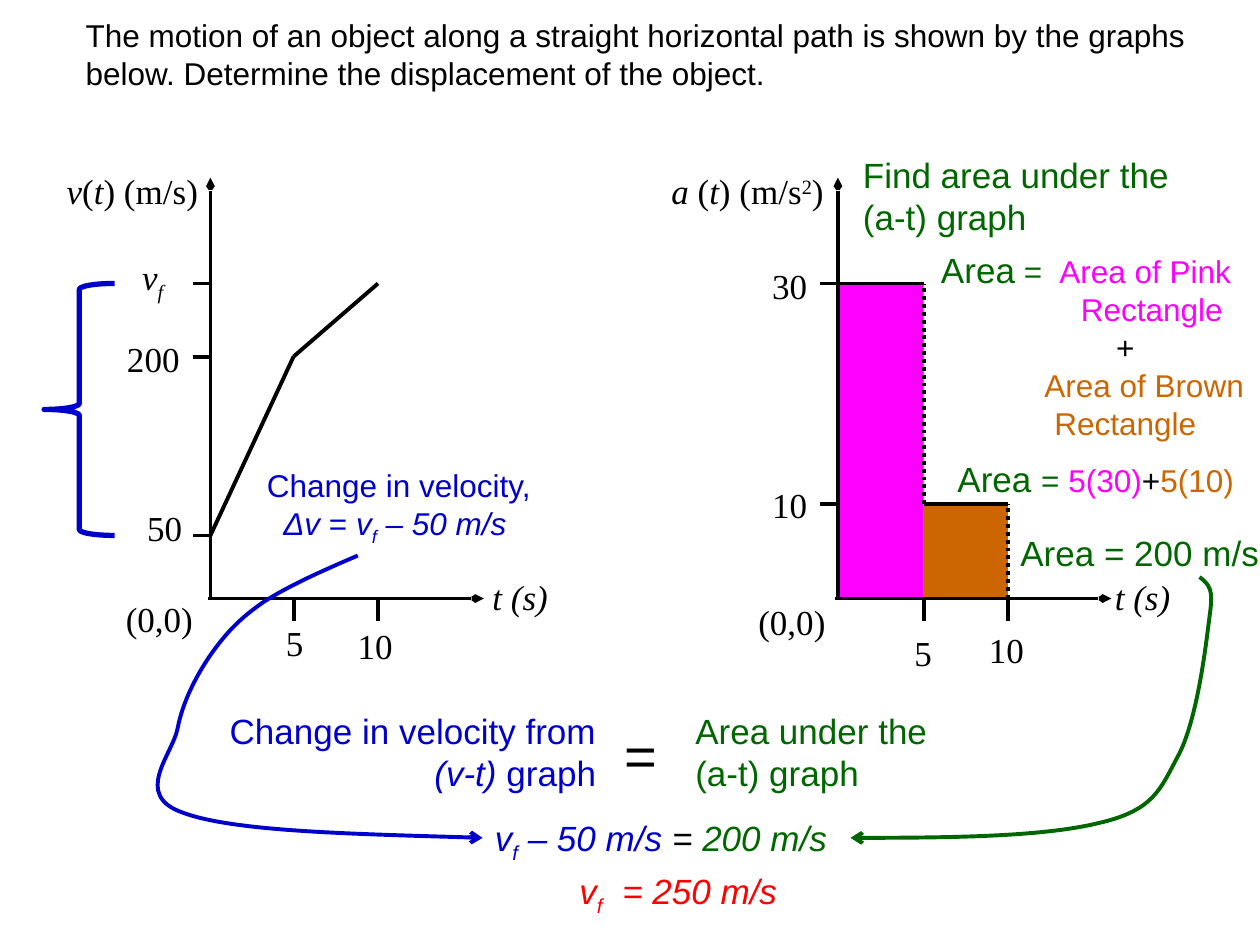
import pptx
import pptx.util
import pptx.dml.color
import pptx.enum.dml
import pptx.enum.shapes
import pptx.enum.text
import pptx.oxml.ns
import lxml.etree

Inches = pptx.util.Inches
RGBColor = pptx.dml.color.RGBColor
qn = pptx.oxml.ns.qn
ALIGN = pptx.enum.text.PP_ALIGN

BLACK = RGBColor(0, 0, 0)
BLUE = RGBColor(0x00, 0x00, 0xCC)
GREEN = RGBColor(0x00, 0x66, 0x00)
PINK = RGBColor(0xFF, 0x00, 0xFF)
BROWN = RGBColor(0xCC, 0x66, 0x00)
RED = RGBColor(0xFF, 0x00, 0x00)
ITALIC = {"italic": True}
SUBSCRIPT = {"baseline": -25}


def add_text(slide, box, paragraphs, shape=None, size=20, font="Arial", color=BLACK,
             italic=False, align=ALIGN.LEFT, spacing=1.0, wrap=True, indents=(), tab=None):
    """Write paragraphs, each a string or a list of (text, format) runs, into a box."""
    shape = shape or slide.shapes.add_textbox(0, 0, 0, 0)
    shape.left, shape.top, shape.width, shape.height = [Inches(length) for length in box]
    frame = shape.text_frame
    frame.word_wrap = wrap
    frame.auto_size = pptx.enum.text.MSO_AUTO_SIZE.NONE
    frame.vertical_anchor = pptx.enum.text.MSO_ANCHOR.TOP
    for index, runs in enumerate(paragraphs):
        paragraph = frame.add_paragraph() if index else frame.paragraphs[0]
        paragraph.alignment = align
        paragraph.line_spacing = spacing
        properties = paragraph._p.get_or_add_pPr()
        if indents:
            properties.set("marL", str(Inches(indents[index])))
        if tab and index == 0:
            tabs = lxml.etree.SubElement(properties, qn("a:tabLst"))
            lxml.etree.SubElement(tabs, qn("a:tab"), pos=str(Inches(tab)), algn="l")
        for text, style in [(runs, {})] if isinstance(runs, str) else runs:
            run = paragraph.add_run()
            run.text = text
            run.font.name = font
            run.font.size = pptx.util.Pt(style.get("size", size))
            run.font.italic = style.get("italic", italic)
            run.font.color.rgb = style.get("color", color)
            if "baseline" in style:
                run._r.get_or_add_rPr().set("baseline", str(style["baseline"] * 1000))


def add_label(slide, left, top, runs, width=0.6, italic=False):
    """Place a serif label beside a graph."""
    add_text(slide, (left, top, width, 0.5), [runs], font="Times New Roman",
             italic=italic, spacing=1.15, wrap=False)


def add_arrowhead(shape, width):
    """Put an arrowhead at the end of a line."""
    lxml.etree.SubElement(shape.line._get_or_add_ln(), qn("a:tailEnd"),
                          type="arrow", w=width, len="med")


def add_line(slide, start, end, width=2.25, dotted=False, arrow=False):
    """Draw a straight black line between two points."""
    line = slide.shapes.add_connector(
        pptx.enum.shapes.MSO_CONNECTOR.STRAIGHT, *[Inches(value) for value in (*start, *end)])
    line.line.color.rgb = BLACK
    line.line.width = pptx.util.Pt(width)
    if dotted:
        line.line.dash_style = pptx.enum.dml.MSO_LINE.ROUND_DOT
    if arrow:
        add_arrowhead(line, "sm")
    lxml.etree.SubElement(line._element.spPr, qn("a:effectLst"))


def add_bar(slide, left, top, width, height, color):
    """Draw one filled rectangle under the acceleration graph."""
    bar = slide.shapes.add_shape(pptx.enum.shapes.MSO_SHAPE.RECTANGLE,
                                 *[Inches(value) for value in (left, top, width, height)])
    bar.shadow.inherit = False
    bar.fill.solid()
    bar.fill.fore_color.rgb = color
    bar.line.fill.background()


def add_curve(slide, points, color):
    """Draw an arrow through cubic segments given as a start and control points."""
    start, *controls = [(Inches(x), Inches(y)) for x, y in points]
    builder = slide.shapes.build_freeform(*start)
    builder.add_line_segments(controls, close=False)
    curve = builder.convert_to_shape()
    curve.shadow.inherit = False
    curve.fill.background()
    curve.line.color.rgb = color
    curve.line.width = pptx.util.Pt(2.25)
    add_arrowhead(curve, "med")
    segments = list(curve._element.iter(qn("a:lnTo")))
    outline = segments[0].getparent()
    for index in range(0, len(segments), 3):
        cubic = lxml.etree.SubElement(outline, qn("a:cubicBezTo"))
        for segment in segments[index:index + 3]:
            cubic.append(segment[0])
            outline.remove(segment)


def add_axes(slide, left, bottom, ticks, levels, time_label):
    """Draw both axes, their tick marks and the time label from the origin given."""
    add_line(slide, (left, bottom), (left, bottom - 3.34), 2, arrow=True)
    add_line(slide, (left - 0.02, bottom), (left + 2.17, bottom), 2, arrow=True)
    for tick in ticks:
        add_line(slide, (left + tick, bottom), (left + tick, bottom + 0.18))
    for level in levels:
        add_line(slide, (left - 0.14, bottom - level), (left, bottom - level))
    add_label(slide, left + time_label, bottom - 0.28, "t (s)", italic=True)


def add_velocity_graph(slide, left, bottom):
    """Draw the velocity graph with its brace and note from the origin given."""
    ticks, levels = (0.66, 1.33), (0.5, 1.92, 2.5)
    add_axes(slide, left, bottom, ticks, levels, 2.14)
    points = [(left + x, bottom - y) for x, y in zip((0, *ticks), levels)]
    for start, end in zip(points, points[1:]):
        add_line(slide, start, end)
    add_label(slide, left - 1.24, bottom - 3.5,
              [("v", ITALIC), ("(", {}), ("t", ITALIC), (") (m/s)", {})], 1.48)
    add_label(slide, left - 0.64, bottom - 2.83, [("v", {}), ("f", SUBSCRIPT)], italic=True)
    add_label(slide, left - 0.76, bottom - 2.17, "200")
    add_label(slide, left - 0.6, bottom - 0.83, "50")
    add_label(slide, left - 0.77, bottom - 0.11, "(0,0)")
    add_label(slide, left + 0.5, bottom + 0.08, "5")
    add_label(slide, left + 1.07, bottom + 0.11, "10")
    brace = slide.shapes.add_shape(
        pptx.enum.shapes.MSO_SHAPE.LEFT_BRACE, Inches(left - 1.32), Inches(bottom - 2.5),
        Inches(0.56), Inches(2))
    brace.shadow.inherit = False
    brace.fill.background()
    brace.line.color.rgb = BLUE
    brace.line.width = pptx.util.Pt(3)
    add_text(slide, (left + 0.35, bottom - 1.1, 3.12, 0.71),
             ["Change in velocity,",
              [("Δv ", ITALIC), ("= ", {}), ("v", ITALIC),
               ("f", {**ITALIC, **SUBSCRIPT}), (" – 50 m/s", ITALIC)]],
             size=18, color=BLUE, indents=(0, 0.13))


def add_acceleration_graph(slide, left, bottom):
    """Draw the acceleration graph with its rectangles and areas from the origin given."""
    first, second = ticks = (0.68, 1.35)
    low, high = levels = (0.75, 2.5)
    add_bar(slide, left + first, bottom - low, second - first, low, BROWN)
    add_bar(slide, left, bottom - high, first, high, PINK)
    add_axes(slide, left, bottom, ticks, levels, 2.1)
    add_line(slide, (left, bottom - high), (left + first, bottom - high))
    add_line(slide, (left + first, bottom - low), (left + second, bottom - low))
    add_line(slide, (left + first, bottom - low), (left + first, bottom - high), dotted=True)
    add_line(slide, (left + second, bottom), (left + second, bottom - low), dotted=True)
    add_label(slide, left - 1.42, bottom - 3.5,
              [("a ", ITALIC), ("(", {}), ("t", ITALIC), (") (m/s", {}),
               ("2", {"baseline": 30}), (")", {})], 1.6)
    add_label(slide, left - 0.62, bottom - 2.75, "30")
    add_label(slide, left - 0.62, bottom - 1.01, "10")
    add_label(slide, left - 0.73, bottom - 0.08, "(0,0)")
    add_label(slide, left + 0.51, bottom + 0.16, "5")
    add_label(slide, left + 1.1, bottom + 0.14, "10")
    add_text(slide, (left + 0.1, bottom - 3.58, 3.25, 0.77),
             ["Find area under the", "(a-t) graph"], color=GREEN)
    small, pink, brown, black = [{"size": 18, "color": color}
                                 for color in (GREEN, PINK, BROWN, BLACK)]
    add_text(slide, (left + 0.72, bottom - 2.83, 2.63, 1.65),
             [[("Area", {}), (" =\t", small), ("Area of Pink", pink)],
              [("Rectangle", pink)], [("+", black)],
              [("Area of Brown", brown)], [("Rectangle", brown)]],
             color=GREEN, wrap=False, indents=(0, 1.11, 1.39, 0.82, 0.9), tab=0.94)
    add_text(slide, (left + 0.85, bottom - 1.17, 2.42, 0.44),
             [[("Area ", {}), ("= ", small), ("5(30)", pink), ("+", black),
               ("5(10)", brown)]], color=GREEN)
    add_text(slide, (left + 1.35, bottom - 0.58, 2, 0.44), ["Area = 200 m/s"],
             color=GREEN, wrap=False)


def add_conclusion(slide, left, top):
    """Set the change in velocity equal to the area and solve below it."""
    add_text(slide, (left, top, 3.5, 0.77),
             [[("Change in velocity from ", {}), ("(v-t) ", ITALIC), ("graph", {})]],
             color=BLUE, align=ALIGN.RIGHT)
    add_text(slide, (left + 3.34, top + 0.09, 0.83, 0.64), ["="], size=32, align=ALIGN.CENTER)
    add_text(slide, (left + 4.09, top, 2.67, 0.77), ["Area under the", "(a-t) graph"],
             color=GREEN)
    add_text(slide, (left + 2.5, top + 0.85, 2.86, 0.44),
             [[("v", {}), ("f", SUBSCRIPT), (" – 50 m/s ", {}),
               ("= ", {"color": BLACK}), ("200 m/s", {"color": GREEN})]],
             color=BLUE, italic=True, wrap=False)
    add_text(slide, (left + 3.17, top + 1.27, 1.78, 0.44),
             [[("v", {}), ("f", SUBSCRIPT), ("\t= 250 m/s", {})]],
             color=RED, italic=True, wrap=False, tab=0.34)


def main():
    """Build the slide and save it."""
    presentation = pptx.Presentation()
    presentation.slide_width, presentation.slide_height = Inches(10), Inches(7.5)
    slide = presentation.slides.add_slide(presentation.slide_layouts[5])
    add_text(slide, (0.58, 0.08, 9.08, 0.71),
             ["The motion of an object along a straight horizontal path is shown by the "
              "graphs below. Determine the displacement of the object."],
             shape=slide.shapes.title, size=18)
    add_velocity_graph(slide, 1.67, 4.75)
    add_acceleration_graph(slide, 6.65, 4.75)
    add_conclusion(slide, 1.33, 5.58)
    add_curve(slide, [(2.84, 4.41), (2.56, 4.53), (2.29, 4.65), (2.09, 4.78), (1.9, 4.91),
                      (1.79, 5.03), (1.67, 5.2), (1.56, 5.36), (1.45, 5.57), (1.41, 5.78),
                      (1.37, 5.99), (1.05, 6.31), (1.45, 6.45), (1.85, 6.6), (2.84, 6.62),
                      (3.83, 6.65)], BLUE)
    add_curve(slide, [(9.52, 4.58), (9.64, 4.67), (9.62, 4.73), (9.59, 4.97), (9.56, 5.21),
                      (9.49, 5.74), (9.35, 6), (9.21, 6.26), (9.16, 6.43), (8.73, 6.53),
                      (8.29, 6.64), (7.52, 6.65), (6.75, 6.65)], GREEN)
    presentation.save("out.pptx")


if __name__ == "__main__":
    main()
